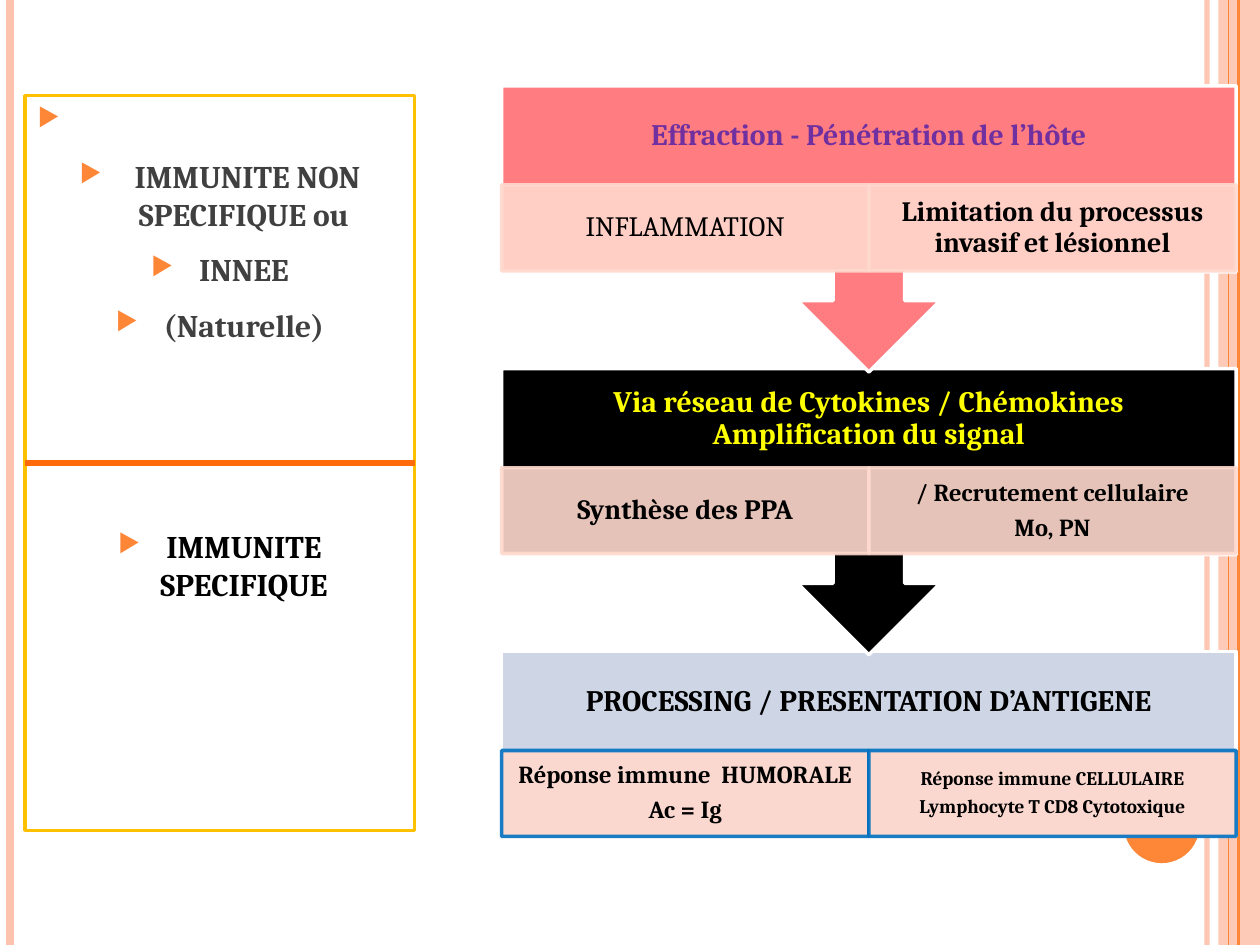
from lxml import etree
from pptx import Presentation
from pptx.dml.color import RGBColor
from pptx.enum import shapes, text
from pptx.oxml.ns import qn
from pptx.util import Cm, Pt

COLORS = dict(
    peach="FEC3AE", orange="FE8637", gold="FFC000", divider="FF6B0A", white="FFFFFF",
    black="000000", grey="404040", pink="FF7C80", ice="CED6E6", blush="FFD9CE",
    blue="0070C0", yellow="FFFF00", purple="7030A0",
)
FONT = "Cambria"
SLIDE_W, SLIDE_H = 25.4, 19.05

RULES = [
    (24.33, "peach", 3, 93),
    (0.2, "peach", 4.5, 100),
    (24.97, "orange", 1.5, 100),
    (24.77, "orange", 0.75, 100),
]
IMMUNITY = [
    (" ", "grey", 10, "LEFT"),
    (" IMMUNITE NON SPECIFIQUE ou", "grey", 10, "CENTER"),
    ("INNEE", "grey", 10, "CENTER"),
    ("(Naturelle)", "grey", 10, "CENTER"),
    ("IMMUNITE SPECIFIQUE", "black", 105, "CENTER"),
]
STAGES = [
    dict(title="Effraction - Pénétration de l’hôte", ink="purple", fill="pink", edge="blush",
         cells=[(["INFLAMMATION"], 16, False),
                (["Limitation du processus invasif et lésionnel"], 16, True)]),
    dict(title="Via réseau de Cytokines / Chémokines\vAmplification du signal",
         ink="yellow", fill="black", edge="blush",
         cells=[(["Synthèse des PPA"], 16, True),
                (["/ Recrutement cellulaire", "Mo, PN"], 14, True)]),
    dict(title="PROCESSING / PRESENTATION D’ANTIGENE", ink="black", fill="ice", edge="blue",
         cells=[(["Réponse immune  HUMORALE", "Ac = Ig"], 14, True),
                (["Réponse immune CELLULAIRE", "Lymphocyte T CD8 Cytotoxique"], 11, True)]),
]
STAGE_X, STAGE_Y, STAGE_W, STAGE_PITCH = 10.11, 1.73, 14.81, 5.7
TITLE_H, CELL_DY, CELL_H = 2.03, 2.0, 1.73
CALLOUT_H, LAST_H = 5.77, 3.73


def rgb(name):
    return RGBColor.from_string(COLORS[name])


def set_alpha(fill_parent, percent):
    if percent < 100:
        color = fill_parent.find(qn("a:solidFill"))[0]
        etree.SubElement(color, qn("a:alpha"), val=str(percent * 1000))


def add_box(s, kind, x, y, w, h, fill=None, line=None, alpha=100):
    sp = s.shapes.add_shape(kind, Cm(x), Cm(y), Cm(w), Cm(h))
    sp.shadow.inherit = False
    if fill:
        sp.fill.solid()
        sp.fill.fore_color.rgb = rgb(fill)
        set_alpha(sp._element.spPr, alpha)
    else:
        sp.fill.background()
    if line:
        sp.line.color.rgb = rgb(line)
        sp.line.width = Pt(2)
        set_alpha(sp.line._get_or_add_ln(), alpha)
    else:
        sp.line.fill.background()
    return sp


def add_line(s, x1, y1, x2, y2, color, width, alpha=100):
    cn = s.shapes.add_connector(shapes.MSO_CONNECTOR.STRAIGHT, Cm(x1), Cm(y1), Cm(x2), Cm(y2))
    cn.line.color.rgb = rgb(color)
    cn.line.width = Pt(width)
    set_alpha(cn.line._get_or_add_ln(), alpha)
    etree.SubElement(cn._element.spPr, qn("a:effectLst"))
    return cn


def style(p, size, color, bold=True, align="CENTER"):
    p.alignment = getattr(text.PP_ALIGN, align)
    f = p.font
    f.name, f.size, f.bold = FONT, Pt(size), bold
    f.color.rgb = rgb(color)


def write(sp, lines, size, color, bold, inset_x, inset_y):
    tf = sp.text_frame
    tf.word_wrap = True
    tf.vertical_anchor = text.MSO_ANCHOR.MIDDLE
    tf.margin_left = tf.margin_right = Cm(inset_x)
    tf.margin_top = tf.margin_bottom = Cm(inset_y)
    for i, line in enumerate(lines):
        p = tf.paragraphs[0] if i == 0 else tf.add_paragraph()
        p.text = line
        style(p, size, color, bold)
        p.line_spacing = 0.9
        p.space_after = Pt(round(size * 0.35, 1))


def add_bullet(p):
    pPr = p._p.get_or_add_pPr()
    pPr.set("marL", str(Cm(0.97)))
    pPr.set("indent", str(-Cm(0.97)))
    tint = etree.Element(qn("a:buClr"))
    etree.SubElement(tint, qn("a:srgbClr"), val=COLORS["orange"])
    size = etree.Element(qn("a:buSzPct"), val="80000")
    char = etree.Element(qn("a:buChar"), char="▶")
    at = [c.tag for c in pPr].index(qn("a:defRPr"))
    pPr[at:at] = [tint, size, char]


def add_stage(s, index, stage):
    y = STAGE_Y + index * STAGE_PITCH
    last = index == len(STAGES) - 1
    kind = RECT if last else shapes.MSO_SHAPE.UP_ARROW_CALLOUT
    body = add_box(s, kind, STAGE_X, y, STAGE_W, LAST_H if last else CALLOUT_H,
                   stage["fill"], "white")
    body.rotation = 0 if last else 180
    title = s.shapes.add_textbox(Cm(STAGE_X), Cm(y), Cm(STAGE_W), Cm(TITLE_H))
    write(title, [stage["title"]], 17, stage["ink"], True, 0.33, 0.33)
    cell_w = STAGE_W / len(stage["cells"])
    for col, (lines, size, bold) in enumerate(stage["cells"]):
        cell = add_box(s, RECT, STAGE_X + col * cell_w, y + CELL_DY, cell_w, CELL_H,
                       "blush", stage["edge"], 90)
        write(cell, lines, size, "black", bold, 0.28, 0.05)


RECT = shapes.MSO_SHAPE.RECTANGLE
prs = Presentation()
prs.slide_width, prs.slide_height = Cm(SLIDE_W), Cm(SLIDE_H)
s = prs.slides.add_slide(prs.slide_layouts[6])

add_box(s, RECT, 24.56, 0, 0.84, SLIDE_H, "peach", alpha=87)
for x, color, width, alpha in RULES:
    add_line(s, x, 0, x, SLIDE_H, color, width, alpha)
add_box(s, shapes.MSO_SHAPE.OVAL, 22.66, 15.88, 1.52, 1.52, "orange")

panel = add_box(s, RECT, 0.51, 1.93, 7.85, 14.81, line="gold")
tf = panel.text_frame
tf.word_wrap = True
tf.vertical_anchor = text.MSO_ANCHOR.TOP
for i, (label, color, gap, align) in enumerate(IMMUNITY):
    p = tf.paragraphs[0] if i == 0 else tf.add_paragraph()
    p.text = label
    style(p, 18, color, align=align)
    p.space_before = Pt(gap)
    add_bullet(p)

for index, stage in reversed(list(enumerate(STAGES))):
    add_stage(s, index, stage)

divider = add_line(s, 0.51, 9.33, 8.36, 9.33, "divider", 3)
divider.begin_connect(panel, 1)
divider.end_connect(panel, 3)

prs.save("out.pptx")
